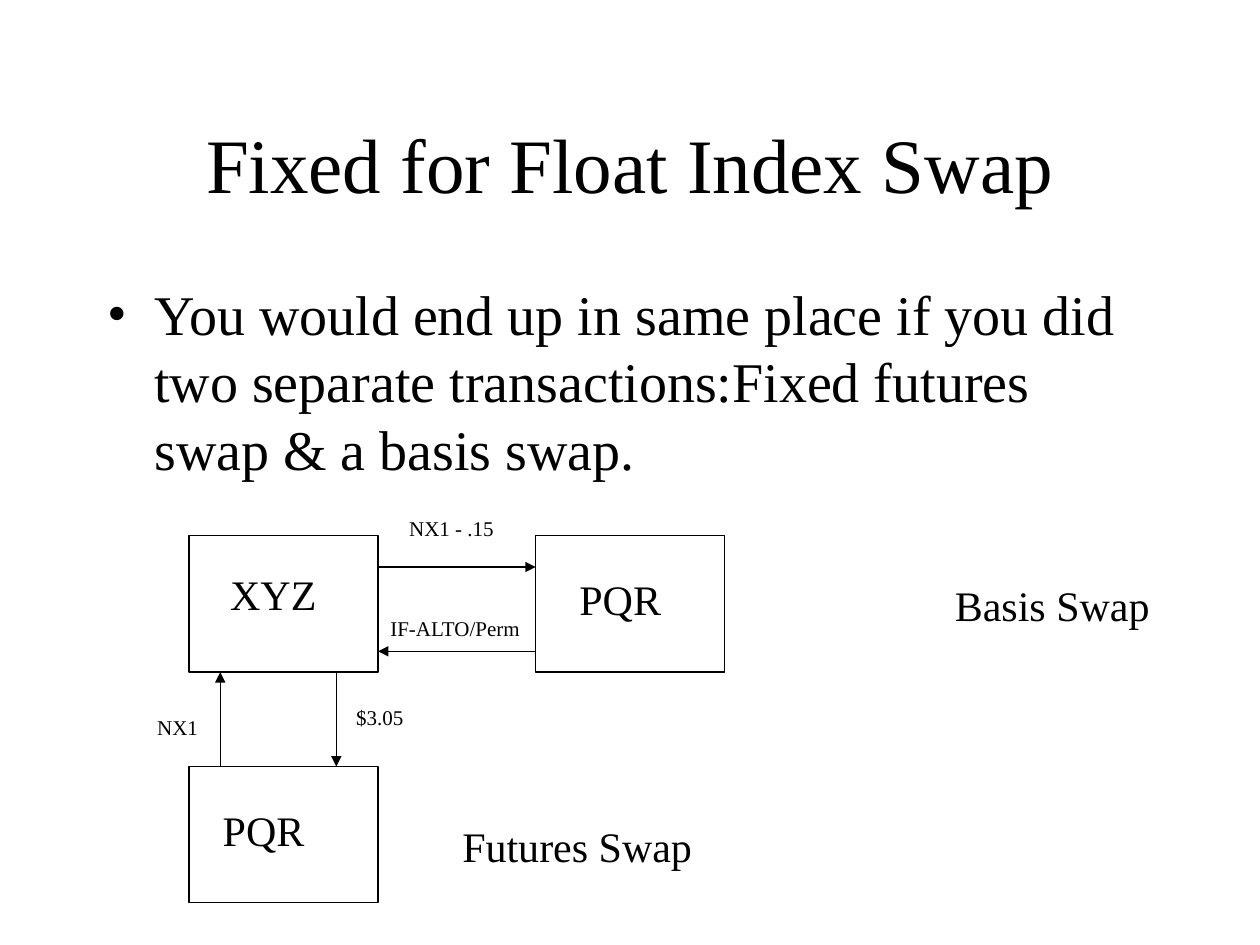
import pptx
import pptx.dml.color
import pptx.enum.shapes
import pptx.enum.text
import pptx.oxml
import pptx.oxml.ns
import pptx.util

Cm = pptx.util.Cm
Pt = pptx.util.Pt
FONT = "Times New Roman"
INK = "000000"
LINE_HEIGHT = {24: 1.27, 12: 0.76}


def color(value):
    return pptx.dml.color.RGBColor.from_string(value)


def apply(target, formats):
    for name, value in formats.items():
        setattr(target, name, value)


def write(frame, text, size, **frame_formats):
    margins = {
        "margin_left": Cm(0.25), "margin_right": Cm(0.25),
        "margin_top": Cm(0.13), "margin_bottom": Cm(0.13),
    }
    apply(frame, {**margins, **frame_formats})
    paragraph = frame.paragraphs[0]
    run = paragraph.add_run()
    run.text = text
    apply(run.font, {"name": FONT, "size": Pt(size), "bold": False})
    run.font.color.rgb = color(INK)
    return paragraph


def outline(line):
    line.color.rgb = color(INK)
    line.width = Pt(0.75)


def add_element(parent, tag, **attributes):
    element = pptx.oxml.ns.qn(tag)
    child = parent.makeelement(element, attributes)
    parent.append(child)
    return child


def place_title(slide, left, top, width, height):
    title = slide.shapes.title
    apply(title, {"left": Cm(left), "top": Cm(top),
                  "width": Cm(width), "height": Cm(height)})
    heading = write(title.text_frame, "Fixed for Float Index Swap", 44,
                    word_wrap=True,
                    vertical_anchor=pptx.enum.text.MSO_ANCHOR.MIDDLE,
                    auto_size=pptx.enum.text.MSO_AUTO_SIZE.NONE)
    heading.alignment = pptx.enum.text.PP_ALIGN.CENTER


def place_statement(slide, left, top, width, height):
    statement = slide.shapes.add_textbox(Cm(left), Cm(top), Cm(width), Cm(height))
    bullet = write(
        statement.text_frame,
        "You would end up in same place if you did two separate "
        "transactions:Fixed futures swap & a basis swap.",
        32, word_wrap=True)
    bullet.space_before = Pt(8)
    properties = bullet._p.get_or_add_pPr()
    properties.set("marL", str(Cm(0.95)))
    properties.set("indent", str(-Cm(0.95)))
    add_element(properties, "a:buFont", typeface=FONT)
    add_element(properties, "a:buChar", char="•")


def add_party(slide, left, top, width, height):
    party = slide.shapes.add_shape(pptx.enum.shapes.MSO_SHAPE.RECTANGLE,
                                   Cm(left), Cm(top), Cm(width), Cm(height))
    party.shadow.inherit = False
    party.fill.background()
    outline(party.line)


def add_payment(slide, start_x, start_y, end_x, end_y):
    payment = slide.shapes.add_connector(
        pptx.enum.shapes.MSO_CONNECTOR.STRAIGHT,
        Cm(start_x), Cm(start_y), Cm(end_x), Cm(end_y))
    outline(payment.line)
    add_element(payment.line._get_or_add_ln(), "a:tailEnd", type="triangle")
    add_element(payment._element.spPr, "a:effectLst")


def add_label(slide, text, size, left, top, width):
    label = slide.shapes.add_textbox(Cm(left), Cm(top), Cm(width),
                                     Cm(LINE_HEIGHT[size]))
    write(label.text_frame, text, size, word_wrap=False,
          auto_size=pptx.enum.text.MSO_AUTO_SIZE.NONE)


def place_swap_diagram(slide, left, top, width, height):
    party_width, party_height = 3.81, 2.75
    right_column, lower_row = width - party_width, height - party_height

    for x, y in [(0, lower_row), (0, 0), (right_column, 0)]:
        add_party(slide, left + x, top + y, party_width, party_height)

    payments = [
        (party_width, 0.63, right_column, 0.63),
        (right_column, 2.33, party_width, 2.33),
        (2.97, party_height, 2.97, lower_row),
        (0.63, lower_row, 0.63, party_height),
    ]
    for start_x, start_y, end_x, end_y in payments:
        add_payment(slide, left + start_x, top + start_y,
                    left + end_x, top + end_y)

    labels = [
        ("XYZ", 24, 0.58, 0.53, 2.3),
        ("PQR", 24, 7.62, 0.63, 2.2),
        ("PQR", 24, 0.43, 5.28, 2.2),
        ("NX1", 12, -0.89, 3.47, 1.4),
        ("$3.05", 12, 3.12, 3.27, 1.55),
        ("NX1 - .15", 12, 4.19, -0.54, 2.3),
        ("IF-ALTO/Perm", 12, 3.81, 1.47, 3.2),
        ("Basis Swap", 24, 15.19, 0.76, 4.5),
        ("Futures Swap", 24, 5.26, 5.61, 5.2),
    ]
    for text, size, x, y, label_width in labels:
        add_label(slide, text, size, left + x, top + y, label_width)


def main():
    deck = pptx.Presentation()
    apply(deck, {"slide_width": Cm(25.4), "slide_height": Cm(19.05)})
    slide = deck.slides.add_slide(deck.slide_layouts[5])
    place_title(slide, 1.9, 1.68, 21.6, 3.18)
    place_statement(slide, 1.91, 5.51, 21.6, 11.43)
    place_swap_diagram(slide, 3.81, 10.8, 10.8, 7.4)
    deck.save("out.pptx")


if __name__ == "__main__":
    main()
